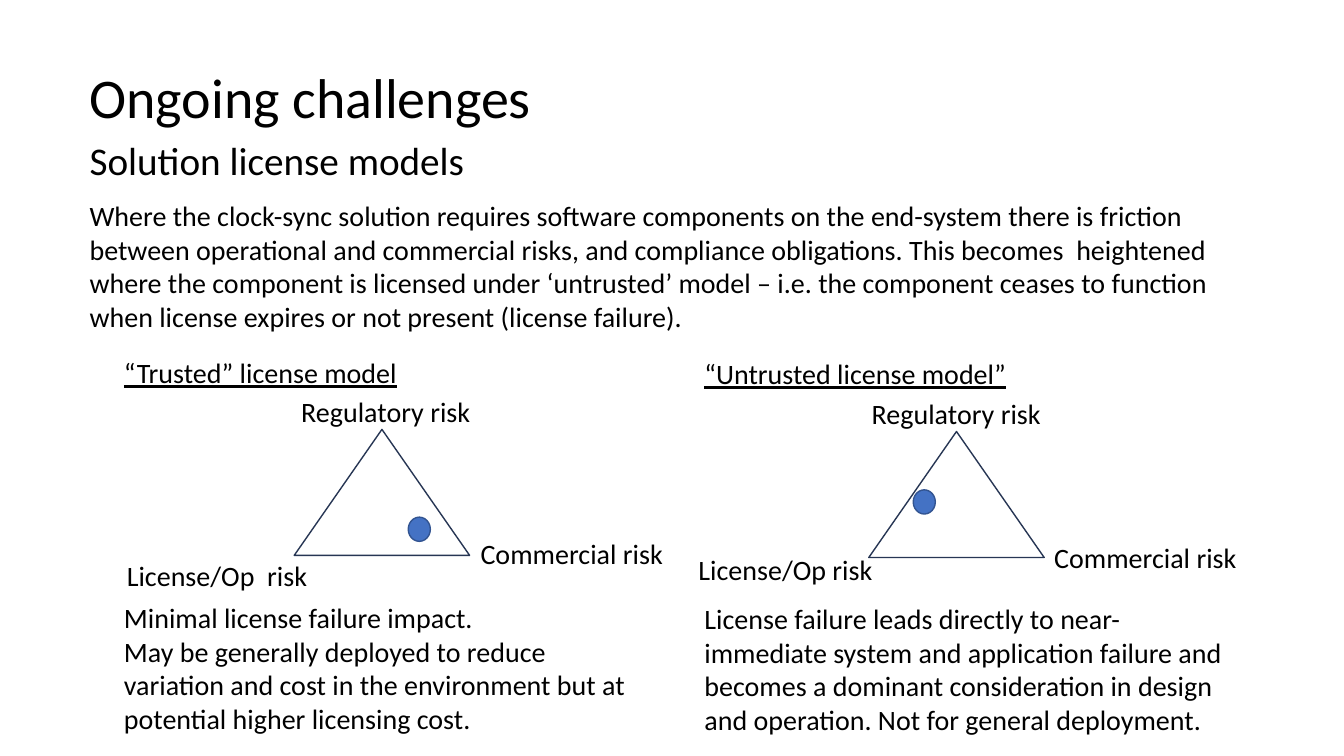
from pptx import Presentation
from pptx.dml.color import RGBColor as RGB
from pptx.enum.shapes import MSO_SHAPE as SHAPE
from pptx.enum.text import MSO_AUTO_SIZE as FIT
from pptx.util import Pt

THEME = {
    "font": "Calibri", "ink": RGB(0, 0, 0),
    "dot": RGB.from_string("4472C4"), "dot_line": RGB.from_string("325491"),
    "triangle_line": RGB.from_string("273654"), "line": 1,
    "title": 40, "subtitle": 28, "body": 20,
}
LINE_H, BODY_H = 31.7, 104.4
TRIANGLE, DOT = (125.3, 90), (15.8, 17.3)

HEADER = [
    ("title", (56.9, 41, 611.3, 55.4), ["Ongoing challenges"]),
    ("subtitle", (56.9, 93.6, 611.3, 41), ["Solution license models"]),
    ("body", (56.9, 138.2, 821.5, BODY_H), [
        "Where the clock-sync solution requires software components on the end-system "
        "there is friction between operational and commercial risks, and compliance "
        "obligations. This becomes  heightened where the component is licensed under "
        "‘untrusted’ model – i.e. the component ceases to function when license expires "
        "or not present (license failure)."]),
]

MODELS = [
    {
        "triangle": (210.2, 306.7),
        "dot": (291.6, 369.4),
        "heading": ("“Trusted” license model", 81.4, 250.6, 211),
        "corners": [("Regulatory risk", 208.1, 278.6, 211),
                    ("License/Op  risk", 83.5, 395.3, 146.2),
                    ("Commercial risk", 336.2, 379.4, 155.5)],
        "outcome": (["Minimal license failure impact.",
                     "May be generally deployed to reduce variation and cost in the "
                     "environment but at potential higher licensing cost."],
                    81.4, 425.5, 383),
    },
    {
        "triangle": (620.6, 308.2),
        "dot": (652.3, 349.9),
        "heading": ("“Untrusted license model”", 496.1, 251.3, 280.8),
        "corners": [("Regulatory risk", 615.6, 279.4, 211),
                    ("License/Op risk", 491.8, 391, 139.7),
                    ("Commercial risk", 745.9, 382.3, 162)],
        "outcome": (["License failure leads directly to near-immediate system and "
                     "application failure and becomes a dominant consideration in "
                     "design and operation. Not for general deployment."],
                    496.1, 426.2, 391),
    },
]


def add_text(s, role, box, lines, underline=None):
    tf = s.shapes.add_textbox(*map(Pt, box)).text_frame
    tf.word_wrap = True
    tf.auto_size = FIT.SHAPE_TO_FIT_TEXT
    fmt = {"name": THEME["font"], "size": Pt(THEME[role]), "underline": underline}
    for i, line in enumerate(lines):
        p = tf.add_paragraph() if i else tf.paragraphs[0]
        r = p.add_run()
        r.text = line
        for key, value in fmt.items():
            setattr(r.font, key, value)
        r.font.color.rgb = THEME["ink"]


def add_mark(s, kind, at, size, line, fill=None):
    sp = s.shapes.add_shape(kind, *map(Pt, at + size))
    sp.shadow.inherit = False
    sp.line.color.rgb = line
    sp.line.width = Pt(THEME["line"])
    if fill is None:
        sp.fill.background()
    else:
        sp.fill.solid()
        sp.fill.fore_color.rgb = fill


def add_model(s, model):
    add_mark(s, SHAPE.ISOSCELES_TRIANGLE, model["triangle"], TRIANGLE, THEME["triangle_line"])
    for label, x, y, w in model["corners"]:
        add_text(s, "body", (x, y, w, LINE_H), [label])
    lines, x, y, w = model["outcome"]
    add_text(s, "body", (x, y, w, BODY_H), lines)
    add_mark(s, SHAPE.OVAL, model["dot"], DOT, THEME["dot_line"], THEME["dot"])
    heading, x, y, w = model["heading"]
    add_text(s, "body", (x, y, w, LINE_H), [heading], underline=True)


def main():
    prs = Presentation()
    prs.slide_width, prs.slide_height = Pt(960), Pt(540)
    s = prs.slides.add_slide(prs.slide_layouts[6])
    for role, box, lines in HEADER:
        add_text(s, role, box, lines)
    for model in MODELS:
        add_model(s, model)
    prs.save("out.pptx")


if __name__ == "__main__":
    main()
